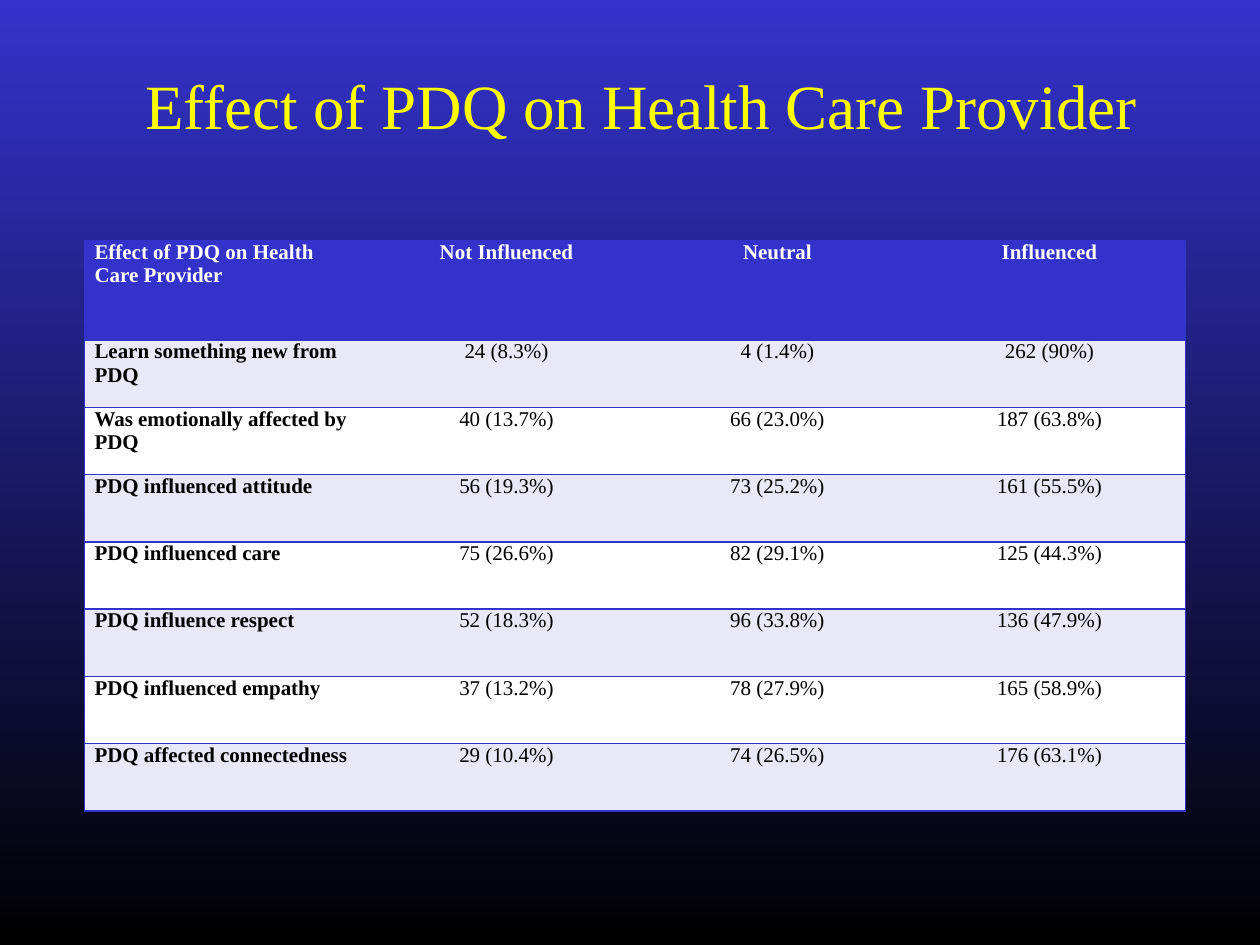
from dataclasses import dataclass

from pptx import Presentation
from pptx.dml.color import RGBColor
from pptx.enum.text import MSO_ANCHOR, MSO_AUTO_SIZE, PP_ALIGN
from pptx.oxml.xmlchemy import OxmlElement
from pptx.util import Inches, Pt


@dataclass(frozen=True)
class Theme:
    font: str = "Times New Roman"
    blue: str = "3333CC"
    black: str = "000000"
    white: str = "FFFFFF"
    yellow: str = "FFFF00"
    band: str = "E8E8F6"
    title_size: int = 36
    table_size: int = 12
    border_width: int = 1


THEME = Theme()
TITLE = "Effect of PDQ on Health Care Provider"
ROWS = [
    ("Effect of PDQ on Health Care Provider", "Not Influenced", "Neutral", "Influenced"),
    ("Learn something new from PDQ", "24 (8.3%)", "4 (1.4%)", "262 (90%)"),
    ("Was emotionally affected by PDQ", "40 (13.7%)", "66 (23.0%)", "187 (63.8%)"),
    ("PDQ influenced attitude", "56 (19.3%)", "73 (25.2%)", "161 (55.5%)"),
    ("PDQ influenced care", "75 (26.6%)", "82 (29.1%)", "125 (44.3%)"),
    ("PDQ influence respect", "52 (18.3%)", "96 (33.8%)", "136 (47.9%)"),
    ("PDQ influenced empathy", "37 (13.2%)", "78 (27.9%)", "165 (58.9%)"),
    ("PDQ affected connectedness", "29 (10.4%)", "74 (26.5%)", "176 (63.1%)"),
]
COLUMN_WIDTHS = (2.28, 2.14, 2.16, 2.16)
HEADER_HEIGHT, ROW_HEIGHT = 0.79, 0.534


def paint_background(page):
    fill = page.background.fill
    fill.gradient()
    fill.gradient_angle = 270
    for stop, color in zip(fill.gradient_stops, (THEME.blue, THEME.black)):
        stop.color.rgb = RGBColor.from_string(color)


def add_span(para, text, size, color, bold=False):
    span = para.add_run()
    span.text = text
    span.font.name = THEME.font
    span.font.size = Pt(size)
    span.font.bold = bold
    span.font.color.rgb = RGBColor.from_string(color)


def add_title(page):
    box = page.shapes.title
    box.left, box.top = Inches(0.78), Inches(0.48)
    box.width, box.height = Inches(8.62), Inches(0.7)
    frame = box.text_frame
    frame.word_wrap = True
    frame.auto_size = MSO_AUTO_SIZE.SHAPE_TO_FIT_TEXT
    frame.vertical_anchor = MSO_ANCHOR.TOP
    para = frame.paragraphs[0]
    para.alignment = PP_ALIGN.CENTER
    para.line_spacing = 1.0
    para.space_before = Pt(0)
    add_span(para, TITLE, THEME.title_size, THEME.yellow)


def set_borders(cell, visible_sides):
    """Draw the named sides (L, R, T, B) and clear the others."""
    properties = cell._tc.get_or_add_tcPr()
    for side in "LRTB":
        line = OxmlElement(f"a:ln{side}")
        line.set("w", str(Pt(THEME.border_width)))
        if side in visible_sides:
            fill = OxmlElement("a:solidFill")
            color = OxmlElement("a:srgbClr")
            color.set("val", THEME.blue)
            fill.append(color)
        else:
            fill = OxmlElement("a:noFill")
        line.append(fill)
        properties.append(line)


def format_cell(cell, text, row, column):
    is_header, is_label = row == 0, column == 0
    sides = "TB" + ("L" if is_label else "")
    sides += "R" if column == len(COLUMN_WIDTHS) - 1 else ""
    set_borders(cell, sides)
    if is_header:
        background = THEME.blue
    else:
        background = THEME.band if row % 2 else THEME.white
    cell.fill.solid()
    cell.fill.fore_color.rgb = RGBColor.from_string(background)
    cell.margin_left = cell.margin_right = Inches(0.08)
    cell.margin_top = cell.margin_bottom = 0
    para = cell.text_frame.paragraphs[0]
    para.alignment = PP_ALIGN.LEFT if is_label else PP_ALIGN.CENTER
    color = THEME.white if is_header else THEME.black
    add_span(para, text, THEME.table_size, color, bold=is_header or is_label)


def add_influence_table(page):
    heights = [HEADER_HEIGHT] + [ROW_HEIGHT] * (len(ROWS) - 1)
    table = page.shapes.add_table(
        len(ROWS), len(COLUMN_WIDTHS), Inches(0.67), Inches(1.91),
        Inches(sum(COLUMN_WIDTHS)), Inches(sum(heights)),
    ).table
    for column, width in zip(table.columns, COLUMN_WIDTHS):
        column.width = Inches(width)
    for row, height in zip(table.rows, heights):
        row.height = Inches(height)
    for row, texts in enumerate(ROWS):
        for column, text in enumerate(texts):
            format_cell(table.cell(row, column), text, row, column)


def main():
    deck = Presentation()
    deck.slide_width, deck.slide_height = Inches(10), Inches(7.5)
    page = deck.slides.add_slide(deck.slide_layouts[5])
    paint_background(page)
    add_influence_table(page)
    add_title(page)
    deck.save("out.pptx")


if __name__ == "__main__":
    main()
